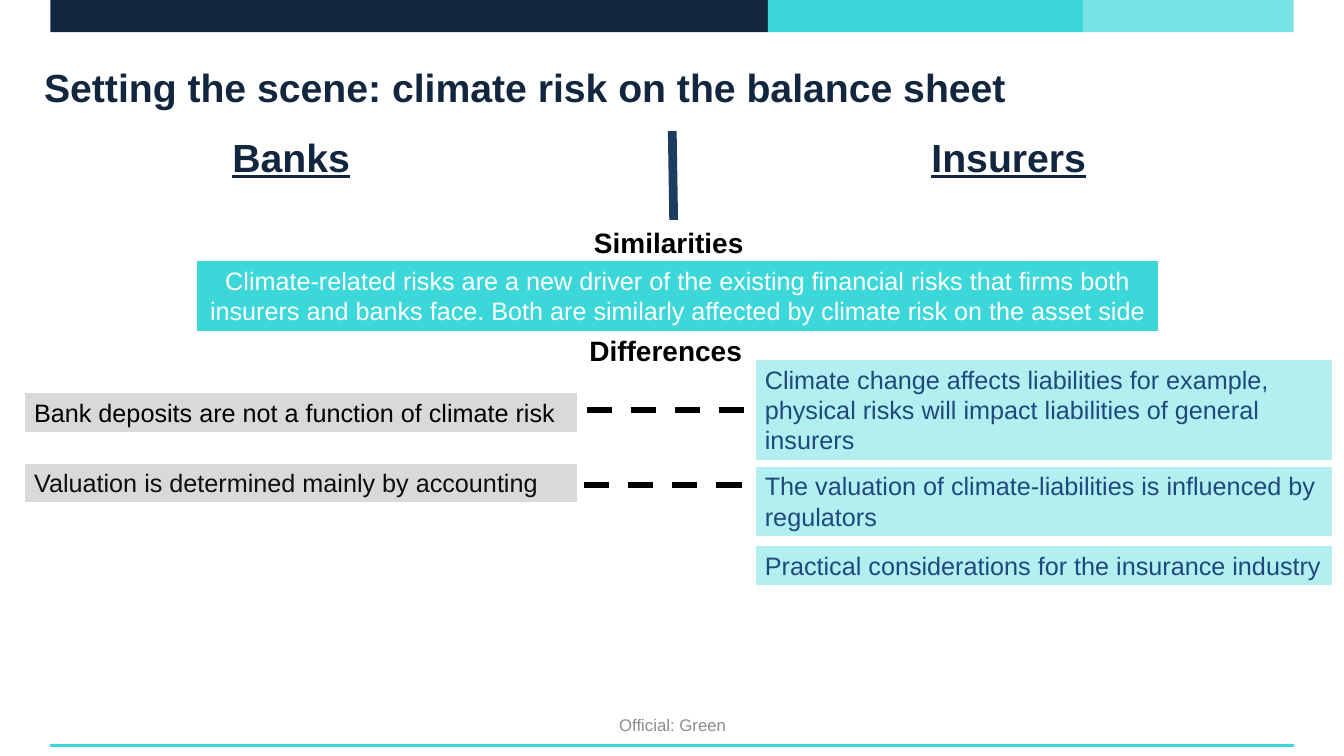
"""Builds the slide on climate risk for banks and insurers."""
from lxml import etree
from pptx import Presentation
from pptx.dml.color import RGBColor
from pptx.enum.dml import MSO_LINE
from pptx.enum.shapes import MSO_CONNECTOR, MSO_SHAPE
from pptx.enum.text import MSO_ANCHOR as ANCHOR, PP_ALIGN as ALIGN
from pptx.oxml.ns import qn
from pptx.util import Pt

NAVY = RGBColor(0x12, 0x27, 0x3F)
DEEP_BLUE = RGBColor(0x1C, 0x3C, 0x60)
TEXT_BLUE = RGBColor(0x1F, 0x49, 0x7D)
TEAL = RGBColor(0x3C, 0xD7, 0xD9)
LIGHT_TEAL = RGBColor(0x77, 0xE3, 0xE4)
PALE_TEAL = RGBColor(0xB1, 0xEF, 0xF0)
GREY = RGBColor(0xD9, 0xD9, 0xD9)
FOOTER_GREY = RGBColor(0x8C, 0x8C, 0x8C)
WHITE = RGBColor(0xFF, 0xFF, 0xFF)
NEAR_BLACK = RGBColor(0x0D, 0x0D, 0x0D)
BLACK = RGBColor(0, 0, 0)


def write(sp, text, size, color, bold=None, underline=None, align=ALIGN.LEFT, anchor=ANCHOR.TOP):
    tf = sp.text_frame
    tf.word_wrap = True
    tf.vertical_anchor = anchor
    p = tf.paragraphs[0]
    p.alignment = align
    r = p.add_run()
    r.text = text
    r.font.name = "Arial"
    r.font.size = Pt(size)
    r.font.color.rgb = color
    r.font.bold = bold
    r.font.underline = underline


def add_title(s, text):
    title = s.shapes.title
    title.left, title.top, title.width, title.height = Pt(31.5), Pt(26), Pt(888), Pt(72)
    tf = title.text_frame
    tf.margin_left = tf.margin_right = tf.margin_top = tf.margin_bottom = 0
    write(title, text, 28, NAVY, bold=True, anchor=ANCHOR.MIDDLE)


def add_rect(s, left, top, width, height, fill, outline=None):
    sp = s.shapes.add_shape(MSO_SHAPE.RECTANGLE, Pt(left), Pt(top), Pt(width), Pt(height))
    sp.shadow.inherit = False
    sp.fill.solid()
    sp.fill.fore_color.rgb = fill
    if outline is None:
        sp.line.fill.background()
    else:
        sp.line.color.rgb = outline
        sp.line.width = Pt(1.5)
    return sp


def add_box(s, left, top, width, height, fill, text, color, size=18, **style):
    write(add_rect(s, left, top, width, height, fill, WHITE), text, size, color, **style)


def add_label(s, left, top, width, height, text, size, color, **style):
    sp = s.shapes.add_textbox(Pt(left), Pt(top), Pt(width), Pt(height))
    write(sp, text, size, color, align=ALIGN.CENTER, **style)


def add_line(s, x1, y1, x2, y2, color, width, dash=None):
    line = s.shapes.add_connector(MSO_CONNECTOR.STRAIGHT, Pt(x1), Pt(y1), Pt(x2), Pt(y2))
    line.line.color.rgb = color
    line.line.width = Pt(width)
    if dash is not None:
        line.line.dash_style = dash
    etree.SubElement(line._element.spPr, qn("a:effectLst"))


def add_frame(s):
    left = 36
    for width, color in ((512.5, NAVY), (225, TEAL), (150.5, LIGHT_TEAL)):
        add_rect(s, left, 0, width, 23, color)
        left += width
    add_line(s, 36, 532.8, 924, 532.8, TEAL, 2.25)
    add_label(s, 240.5, 502.5, 480, 30, "Official: Green", 12, FOOTER_GREY, anchor=ANCHOR.MIDDLE)


def add_similarities(s):
    add_line(s, 480.2, 93.6, 481.7, 188.6, DEEP_BLUE, 6.25)
    add_box(s, 339, 157.7, 283, 31.5, WHITE, "Similarities ", BLACK, 20,
            bold=True, align=ALIGN.CENTER)
    for left, heading in ((27.4, "Banks"), (540, "Insurers")):
        add_label(s, left, 91.5, 361, 41.2, heading, 28, NAVY, bold=True, underline=True)
    add_box(s, 140, 186, 688, 51, TEAL,
            "Climate-related risks are a new driver of the existing financial risks that firms both "
            "insurers and banks face. Both are similarly affected by climate risk on the asset side",
            WHITE, align=ALIGN.CENTER)


def add_differences(s):
    add_label(s, 334, 234.7, 283, 31.5, "Differences", 20, BLACK, bold=True)
    banks = (
        (280, "Bank deposits are not a function of climate risk", BLACK),
        (330.5, "Valuation is determined mainly by accounting", NEAR_BLACK),
    )
    for top, text, color in banks:
        add_box(s, 17.3, top, 396, 29, GREY, text, color)
    insurers = (
        (256.5, 72.7, "Climate change affects liabilities for example, physical risks will impact "
                      "liabilities of general insurers"),
        (332.6, 51, "The valuation of climate-liabilities is influenced by regulators"),
        (389.5, 29, "Practical considerations for the insurance industry"),
    )
    for top, height, text in insurers:
        add_box(s, 539.3, top, 413, height, PALE_TEAL, text, TEXT_BLUE)
    for left, y in ((419, 293), (417, 346.3)):
        add_line(s, left, y, 539.3, y, BLACK, 4.5, MSO_LINE.DASH)


def main():
    prs = Presentation()
    prs.slide_width, prs.slide_height = Pt(960), Pt(540)
    s = prs.slides.add_slide(prs.slide_layouts[5])
    add_frame(s)
    add_title(s, "Setting the scene: climate risk on the balance sheet")
    add_similarities(s)
    add_differences(s)
    prs.save("out.pptx")


if __name__ == "__main__":
    main()
